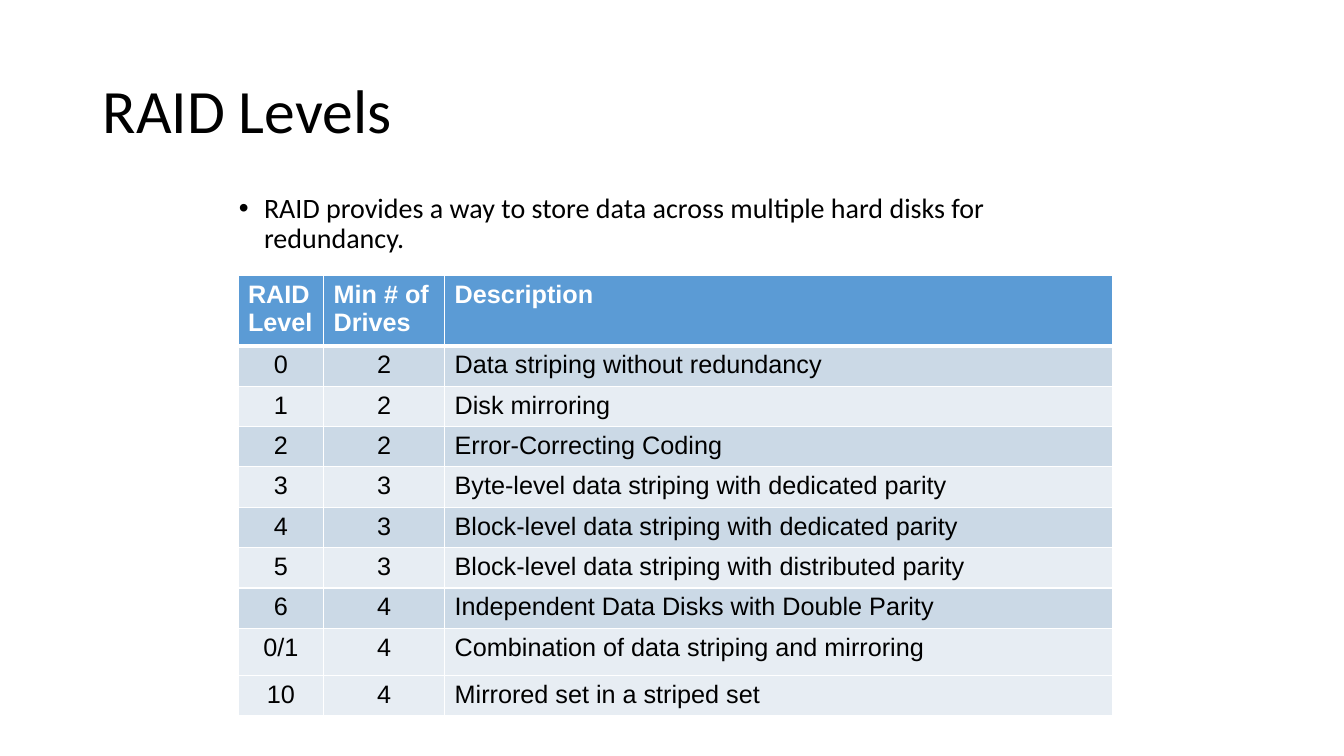
from dataclasses import dataclass

from lxml import etree
from pptx import Presentation
from pptx.dml.color import RGBColor
from pptx.enum.text import MSO_ANCHOR, PP_ALIGN
from pptx.oxml.ns import qn
from pptx.slide import Slide
from pptx.table import _Cell
from pptx.text.text import _Paragraph
from pptx.util import Inches, Pt

CENTER, LEFT = PP_ALIGN.CENTER, PP_ALIGN.LEFT
MIDDLE, TOP = MSO_ANCHOR.MIDDLE, MSO_ANCHOR.TOP

BLACK, WHITE = "000000", "FFFFFF"
HEADER_BLUE, DARK_BAND, LIGHT_BAND = "5B9BD5", "CBD9E6", "E7EDF3"
COLUMN_WIDTHS = (0.85, 1.2, 6.63)
HEADINGS = ("RAID Level", "Min # of Drives", "Description")


@dataclass(frozen=True)
class RaidLevel:
    level: str
    min_drives: int
    description: str
    band: str
    height: float = 0.4


@dataclass(frozen=True)
class TextBlock:
    text: str
    left: float
    top: float
    width: float
    height: float
    size: int
    anchor: MSO_ANCHOR


RAID_LEVELS = (
    RaidLevel("0", 2, "Data striping without redundancy", DARK_BAND),
    RaidLevel("1", 2, "Disk mirroring", LIGHT_BAND),
    RaidLevel("2", 2, "Error-Correcting Coding", DARK_BAND),
    RaidLevel("3", 3, "Byte-level data striping with dedicated parity", LIGHT_BAND),
    RaidLevel("4", 3, "Block-level data striping with dedicated parity", DARK_BAND),
    RaidLevel("5", 3, "Block-level data striping with distributed parity", LIGHT_BAND),
    RaidLevel("6", 4, "Independent Data Disks with Double Parity", DARK_BAND),
    RaidLevel("0/1", 4, "Combination of data striping and mirroring", LIGHT_BAND, 0.47),
    RaidLevel("10", 4, "Mirrored set in a striped set", LIGHT_BAND),
)
TITLE = TextBlock("RAID Levels", 0.92, 0.4, 11.5, 1.45, 44, MIDDLE)
SUMMARY = TextBlock(
    "RAID provides a way to store data across multiple hard disks for redundancy.",
    2.27, 1.88, 8.68, 0.95, 20, TOP,
)


def rgb(color: str) -> RGBColor:
    return RGBColor.from_string(color)


def style_runs(paragraph: _Paragraph, font: str, size: int, color: str, bold: bool = False) -> None:
    for run in paragraph.runs:
        run.font.name = font
        run.font.size = Pt(size)
        run.font.bold = bold
        run.font.color.rgb = rgb(color)


def add_text(slide: Slide, block: TextBlock) -> _Paragraph:
    place = map(Inches, (block.left, block.top, block.width, block.height))
    frame = slide.shapes.add_textbox(*place).text_frame
    frame.word_wrap = True
    frame.vertical_anchor = block.anchor
    frame.text = block.text
    paragraph = frame.paragraphs[0]
    paragraph.line_spacing = 0.9
    style_runs(paragraph, "Calibri", block.size, BLACK)
    return paragraph


def add_bullet(paragraph: _Paragraph) -> None:
    paragraph.space_before = Pt(10)
    properties = paragraph._p.get_or_add_pPr()
    properties.set("marL", str(Inches(0.25)))
    properties.set("indent", str(Inches(-0.25)))
    etree.SubElement(properties, qn("a:buFont")).set("typeface", "Arial")
    etree.SubElement(properties, qn("a:buChar")).set("char", "•")


def set_borders(cell: _Cell, top: int, bottom: int) -> None:
    properties = cell._tc.get_or_add_tcPr()
    widths = {"a:lnL": 1, "a:lnR": 1, "a:lnT": top, "a:lnB": bottom}
    for position, (side, width) in enumerate(widths.items()):
        line = etree.Element(qn(side), w=str(Pt(width)))
        fill = etree.SubElement(line, qn("a:solidFill"))
        etree.SubElement(fill, qn("a:srgbClr")).set("val", WHITE)
        properties.insert(position, line)


def fill_cell(cell: _Cell, text: str, row: int, column: int, band: str) -> None:
    is_header = row == 0
    cell.text_frame.text = text
    paragraph = cell.text_frame.paragraphs[0]
    paragraph.alignment = LEFT if is_header or column == 2 else CENTER
    style_runs(paragraph, "Arial", 18, WHITE if is_header else BLACK, is_header)
    cell.fill.solid()
    cell.fill.fore_color.rgb = rgb(band)
    set_borders(cell, top=3 if row == 1 else 1, bottom=3 if is_header else 1)


def add_raid_table(slide: Slide) -> None:
    heights = [0.7] + [raid.height for raid in RAID_LEVELS]
    bands = [HEADER_BLUE] + [raid.band for raid in RAID_LEVELS]
    texts = [HEADINGS] + [
        (raid.level, str(raid.min_drives), raid.description) for raid in RAID_LEVELS
    ]
    table = slide.shapes.add_table(
        len(texts), len(HEADINGS), Inches(2.36), Inches(2.73),
        Inches(sum(COLUMN_WIDTHS)), Inches(sum(heights)),
    ).table
    for column, width in enumerate(COLUMN_WIDTHS):
        table.columns[column].width = Inches(width)
    for row, (height, band, row_texts) in enumerate(zip(heights, bands, texts)):
        table.rows[row].height = Inches(height)
        for column, text in enumerate(row_texts):
            fill_cell(table.cell(row, column), text, row, column, band)


def main() -> None:
    presentation = Presentation()
    presentation.slide_width = Inches(13.33)
    presentation.slide_height = Inches(7.5)
    slide = presentation.slides.add_slide(presentation.slide_layouts[6])

    # Title and summary
    add_text(slide, TITLE)
    add_bullet(add_text(slide, SUMMARY))

    # Table of RAID levels
    add_raid_table(slide)

    presentation.save("out.pptx")


if __name__ == "__main__":
    main()
